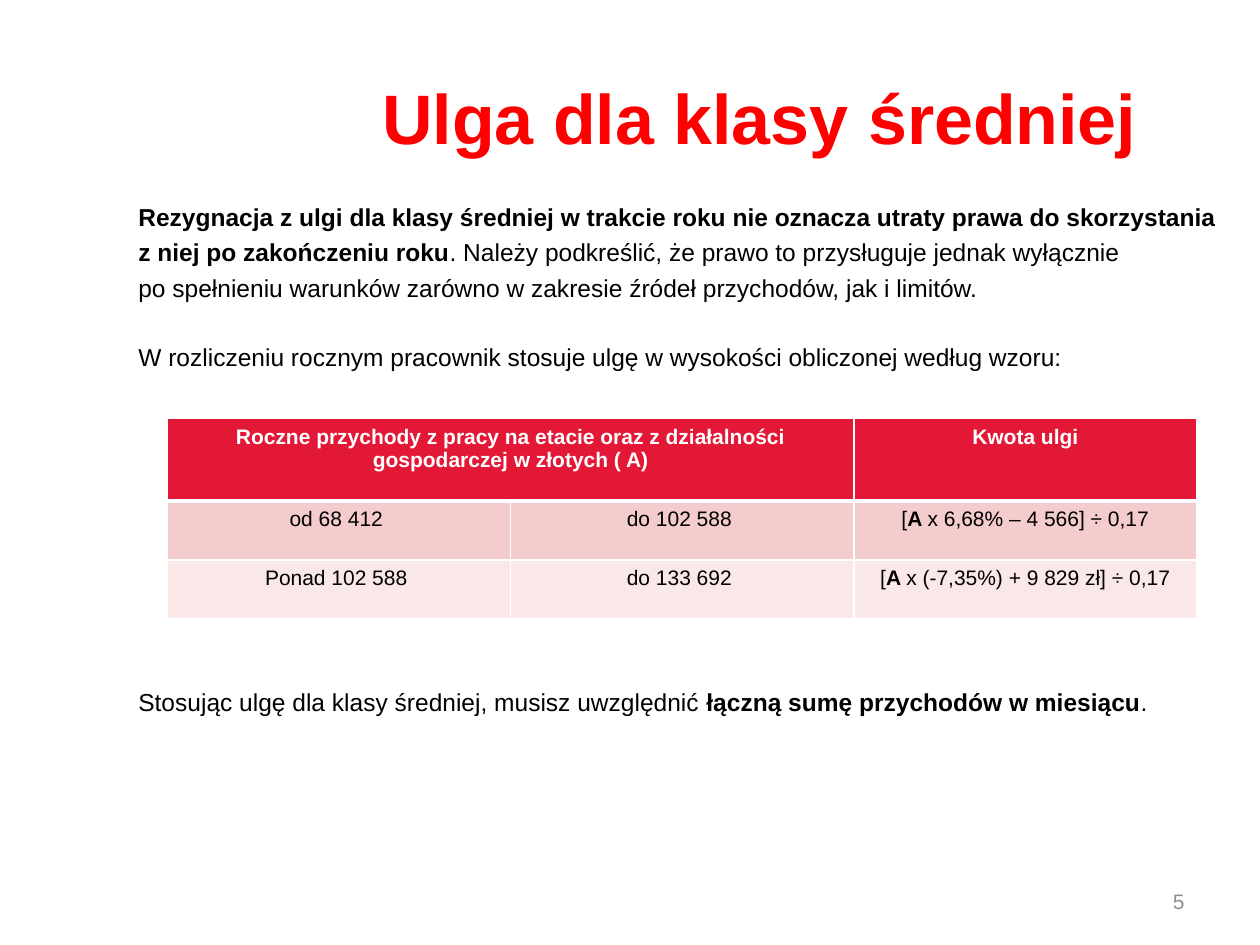
from pptx import Presentation
from pptx.dml.color import RGBColor
from pptx.enum.text import MSO_ANCHOR, PP_ALIGN
from pptx.oxml import parse_xml
from pptx.oxml.ns import nsdecls
from pptx.util import Cm, Pt


def rgb(value):
    return RGBColor.from_string(value)


class SlideBuilder:
    """Holds the style and the current slide, and adds its elements."""

    font = "Arial"
    black, white, red, grey = "000000", "FFFFFF", "FF0000", "8C8C8C"
    row_fills = ["E31837", "F4CCCE", "FAE8E8"]

    def __init__(self, prs):
        self.slide = prs.slides.add_slide(prs.slide_layouts[5])

    def add_runs(self, p, text, size, color, align=PP_ALIGN.LEFT, bold=False):
        p.alignment = align
        for i, part in enumerate(text.split("**")):
            if part:
                r = p.add_run()
                r.text = part
                r.font.name = self.font
                r.font.size = Pt(size)
                r.font.bold = bold or i % 2 == 1
                r.font.color.rgb = rgb(color)

    def title(self, text, left, top, width, height):
        sp = self.slide.shapes.title
        sp.left, sp.top, sp.width, sp.height = Cm(left), Cm(top), Cm(width), Cm(height)
        tf = sp.text_frame
        tf.vertical_anchor = MSO_ANCHOR.MIDDLE
        self.add_runs(tf.paragraphs[0], text, 40, self.red, PP_ALIGN.CENTER, True)

    def text(self, paragraphs, left, top, width, height, size, color,
             align=PP_ALIGN.LEFT, anchor=MSO_ANCHOR.TOP):
        sp = self.slide.shapes.add_textbox(Cm(left), Cm(top), Cm(width), Cm(height))
        tf = sp.text_frame
        tf.word_wrap = True
        tf.vertical_anchor = anchor
        for i, (text, space) in enumerate(paragraphs):
            p = tf.add_paragraph() if i else tf.paragraphs[0]
            p.space_before = Pt(space)
            self.add_runs(p, text, size, color, align)

    def border(self, cell, bottom):
        tcPr = cell._tc.get_or_add_tcPr()
        for side, width in zip("LRTB", (1, 1, 1, bottom)):
            tcPr.append(parse_xml(
                f'<a:ln{side} {nsdecls("a")} w="{Pt(width)}"><a:solidFill>'
                f'<a:srgbClr val="{self.white}"/></a:solidFill></a:ln{side}>'))

    def table(self, rows, left, top, width, heights):
        shape = self.slide.shapes.add_table(
            len(rows), len(rows[0]), Cm(left), Cm(top), Cm(width), Cm(sum(heights)))
        table = shape.table
        for i, (row, height, fill) in enumerate(zip(rows, heights, self.row_fills)):
            table.rows[i].height = Cm(height)
            header = i == 0
            for j, text in enumerate(row):
                cell = table.cell(i, j)
                self.border(cell, 3 if header else 1)
                cell.fill.solid()
                cell.fill.fore_color.rgb = rgb(fill)
                self.add_runs(cell.text_frame.paragraphs[0], text, 12,
                              self.white if header else self.black,
                              PP_ALIGN.CENTER, header)
        table.cell(0, 0).merge(table.cell(0, 1))


def main():
    prs = Presentation()
    prs.slide_width, prs.slide_height = Cm(25.4), Cm(19.05)
    s = SlideBuilder(prs)
    s.title("Ulga dla klasy średniej ", 6.88, 0.76, 17.25, 3.18)
    s.text([
        ("**Rezygnacja z ulgi dla klasy średniej w trakcie roku nie oznacza "
         "utraty prawa do skorzystania**", 0),
        ("**z niej po zakończeniu roku**. Należy podkreślić, że prawo to "
         "przysługuje jednak wyłącznie", 3.5),
        ("po spełnieniu warunków zarówno w zakresie źródeł przychodów, "
         "jak i limitów.", 3.5),
        ("W rozliczeniu rocznym pracownik stosuje ulgę w wysokości obliczonej "
         "według wzoru:", 23),
        ("Stosując ulgę dla klasy średniej, musisz uwzględnić "
         "**łączną sumę przychodów w miesiącu**.", 180),
    ], 2.54, 3.94, 22.86, 12.57, 14, s.black)
    s.table([
        ["Roczne przychody z pracy na etacie oraz z działalności "
         "gospodarczej w złotych ( A)", "", "Kwota ulgi"],
        ["od 68 412 ", "do 102 588 ", "[**A **x 6,68% – 4 566] ÷ 0,17"],
        ["Ponad 102 588 ", "do 133 692 ", "[**A **x (-7,35%) + 9 829 zł] ÷ 0,17"],
    ], 3.38, 8.44, 20.75, [1.66, 1.19, 1.19])
    s.text([("5", 0)], 18.2, 17.66, 5.93, 1.01, 12, s.grey,
           PP_ALIGN.RIGHT, MSO_ANCHOR.MIDDLE)
    prs.save("out.pptx")


if __name__ == "__main__":
    main()
